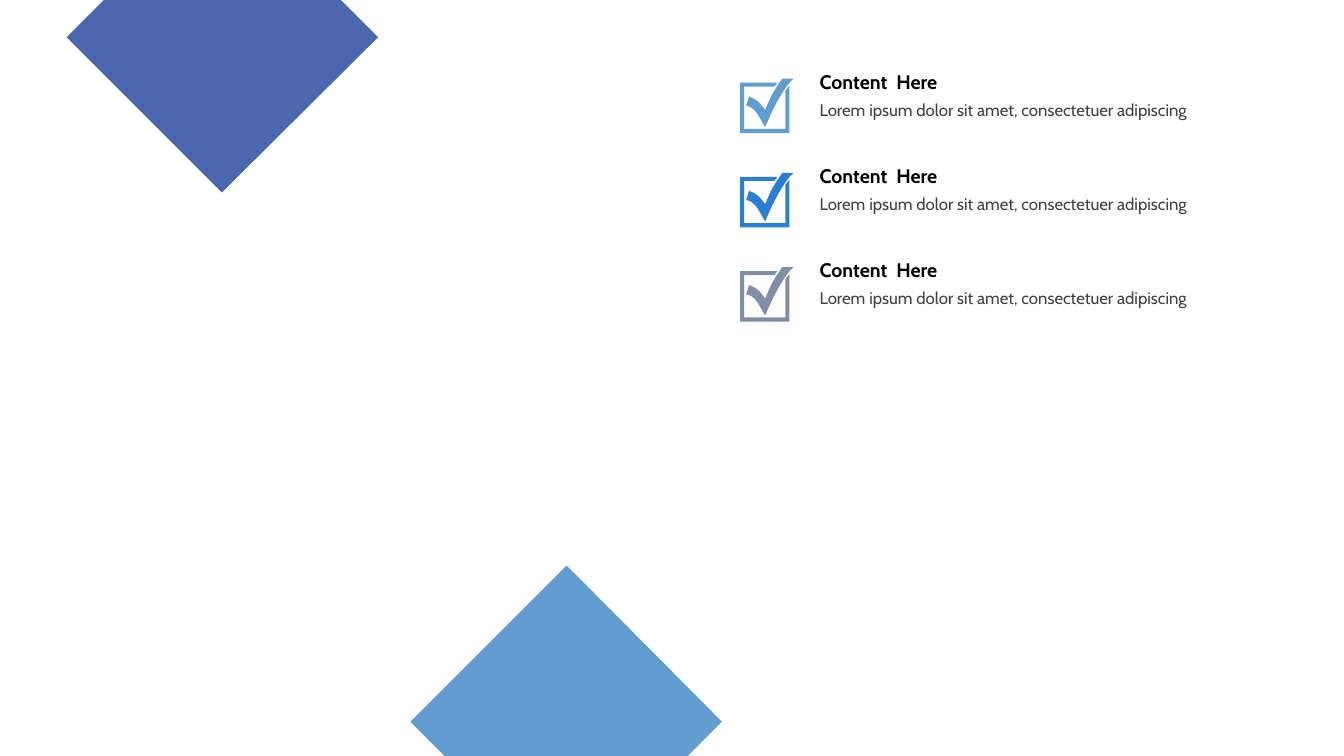
from pptx import Presentation
from pptx.dml.color import RGBColor
from pptx.enum.text import MSO_ANCHOR, MSO_AUTO_SIZE
from pptx.util import Inches, Pt

TOP, MIDDLE = MSO_ANCHOR.TOP, MSO_ANCHOR.MIDDLE
GROW = MSO_AUTO_SIZE.SHAPE_TO_FIT_TEXT

BLACK = RGBColor(0x00, 0x00, 0x00)
DARK_GRAY = RGBColor(0x40, 0x40, 0x40)
INDIGO = RGBColor(0x4A, 0x66, 0xAC)
SKY = RGBColor(0x62, 0x9D, 0xD1)
BLUE = RGBColor(0x29, 0x7F, 0xD5)
SLATE = RGBColor(0x7F, 0x8F, 0xA9)

FONT = "Cabin"
HEADING = {"size": Pt(14), "bold": True, "name": FONT}
BODY = {"size": Pt(12), "bold": False, "name": FONT}
ROW_COLORS = (SKY, BLUE, SLATE)
ROW_PITCH = 1.87 / 2
CURVE_STEPS = 10

CHECK_FRAME = [(0, 0.04), (0.37, 0.04), (0.34, 0.08), (0.04, 0.08), (0.04, 0.5),
               (0.45, 0.5), (0.45, 0.12), (0.49, 0.07), (0.49, 0.54), (0, 0.54)]
TICK_LEFT = [[(0.53, 0), (0.43, 0.09), (0.32, 0.31), (0.25, 0.48)],
             [(0.25, 0.48), (0.2, 0.41), (0.16, 0.28), (0.06, 0.27)]]
TICK_RIGHT = [[(0.09, 0.18), (0.18, 0.21), (0.2, 0.25), (0.25, 0.31)],
              [(0.25, 0.31), (0.3, 0.19), (0.32, 0.14), (0.42, 0)]]
UPPER_DIAMOND = [(0.37, 0), (2.72, 0), (3.09, 0.37), (1.54, 1.91), (0, 0.37)]
LOWER_DIAMOND = [(1.55, 0), (3.09, 1.55), (2.75, 1.89), (0.34, 1.89), (0, 1.55)]


def curve_points(curve):
    points = []
    for step in range(CURVE_STEPS + 1):
        t = step / CURVE_STEPS
        weights = ((1 - t) ** 3, 3 * t * (1 - t) ** 2, 3 * t * t * (1 - t), t ** 3)
        points.append(tuple(sum(w * p[axis] for w, p in zip(weights, curve))
                            for axis in (0, 1)))
    return points


def add_outline(shapes, left, top, contours, color):
    builder = None
    for contour in contours:
        points = [(Inches(left + x), Inches(top + y)) for x, y in contour]
        if builder is None:
            builder = shapes.build_freeform(*points[0])
        else:
            builder.move_to(*points[0])
        builder.add_line_segments(points[1:], close=True)
    s = builder.convert_to_shape()
    s.shadow.inherit = False
    s.fill.solid()
    s.fill.fore_color.rgb = color
    s.line.fill.background()


def add_text(shapes, left, top, width, height, text, style, color, anchor):
    box = shapes.add_textbox(*map(Inches, (left, top, width, height)))
    tf = box.text_frame
    tf.word_wrap = True
    tf.auto_size = GROW
    tf.vertical_anchor = anchor
    r = tf.paragraphs[0].add_run()
    r.text = text
    for name, value in style.items():
        setattr(r.font, name, value)
    r.font.color.rgb = color


def add_check_row(shapes, left, top, width, color):
    text_left, text_width = left + 0.69, width - 0.69
    group = shapes.add_group_shape()
    add_text(group.shapes, text_left, top + 0.3, text_width, 0.3,
             "Lorem ipsum dolor sit amet, consectetuer adipiscing",
             BODY, DARK_GRAY, TOP)
    add_text(group.shapes, text_left, top, text_width, 0.34,
             "Content  Here", HEADING, BLACK, MIDDLE)
    tick = [p for curve in TICK_LEFT + TICK_RIGHT for p in curve_points(curve)]
    add_outline(shapes, left, top + 0.14, [CHECK_FRAME, tick], color)


def add_checklist(shapes, left, top, width):
    for row, color in enumerate(ROW_COLORS):
        add_check_row(shapes, left, top + row * ROW_PITCH, width, color)


def main():
    prs = Presentation()
    prs.slide_width, prs.slide_height = Inches(13.33), Inches(7.5)
    shapes = prs.slides.add_slide(prs.slide_layouts[6]).shapes
    add_checklist(shapes, 7.34, 0.64, 5.51)
    add_outline(shapes, 0.66, 0, [UPPER_DIAMOND], INDIGO)
    add_outline(shapes, 4.07, 5.61, [LOWER_DIAMOND], SKY)
    prs.save("out.pptx")


if __name__ == "__main__":
    main()
